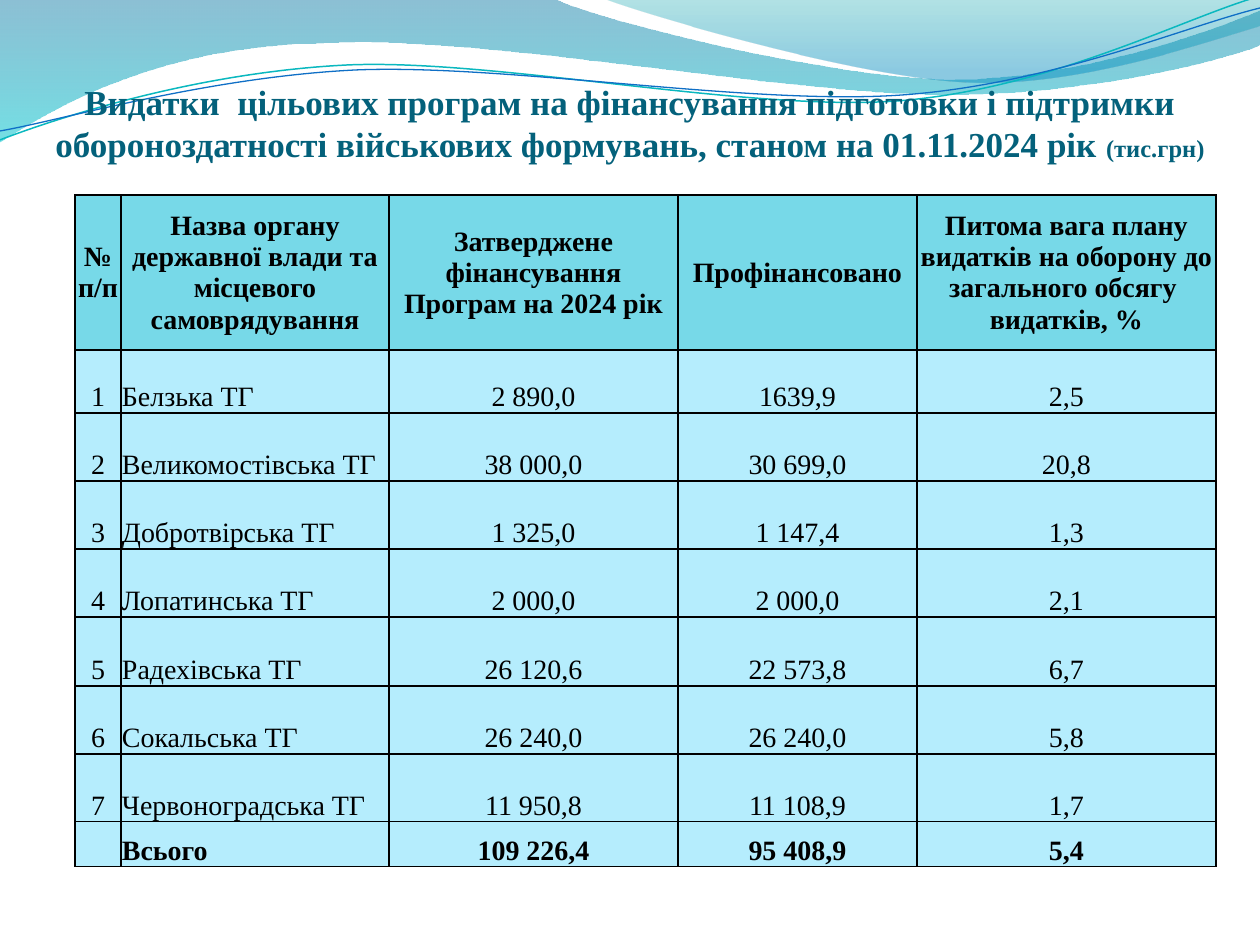
"""Build a slide with a wave banner, a title and a table of defence spending."""
from math import cos, radians, sin

from lxml import etree
from pptx import Presentation
from pptx.dml.color import RGBColor
from pptx.enum.text import MSO_ANCHOR, MSO_AUTO_SIZE, PP_ALIGN
from pptx.oxml.ns import qn
from pptx.util import Pt

CENTER = PP_ALIGN.CENTER
MIDDLE, BOTTOM = MSO_ANCHOR.MIDDLE, MSO_ANCHOR.BOTTOM
NOFIT = MSO_AUTO_SIZE.NONE

PX = 914400 / 126
TILT = 2.7
FONT = "Times New Roman"
BLACK = RGBColor(0x00, 0x00, 0x00)
NAVY = RGBColor(0x04, 0x61, 0x7B)
HEAD = RGBColor(0x77, 0xD9, 0xE8)
BODY = RGBColor(0xB5, 0xED, 0xFD)
TEAL = RGBColor(0x0A, 0xB8, 0xBF)
BLUE = RGBColor(0x0F, 0x6F, 0xC6)
DEEP = RGBColor(0x00, 0x74, 0xA1)
CYAN = RGBColor(0x00, 0xC6, 0xCF)
SEA = RGBColor(0x00, 0xA1, 0xA9)
SKY = RGBColor(0x00, 0x8B, 0xBF)

TITLE = [
    ("Видатки  цільових програм на фінансування підготовки і підтримки "
     "обороноздатності військових формувань, станом на 01.11.2024 рік ", 20),
    ("(тис.грн)", 14),
]
ROWS = [
    ("№ п/п", "Назва органу державної влади та місцевого самоврядування",
     "Затверджене фінансування Програм на 2024 рік", "Профінансовано",
     "Питома вага плану видатків на оборону до загального обсягу  видатків, %"),
    ("1", "Белзька ТГ", "2 890,0", "1639,9", "2,5"),
    ("2", "Великомостівська ТГ", "38 000,0", "30 699,0", "20,8"),
    ("3", "Добротвірська ТГ", "1 325,0", "1 147,4", "1,3"),
    ("4", "Лопатинська ТГ", "2 000,0", "2 000,0", "2,1"),
    ("5", "Радехівська ТГ", "26 120,6", "22 573,8", "6,7"),
    ("6", "Сокальська ТГ", "26 240,0", "26 240,0", "5,8"),
    ("7", "Червоноградська ТГ", "11 950,8", "11 108,9", "1,7"),
    ("", "Всього", "109 226,4", "95 408,9", "5,4"),
]
WIDTHS = [46, 268, 289, 239, 299]
HEIGHTS = [155, 63, 68, 68, 68, 69, 68, 68, 45]

BANDS = [
    ([[(0, 0)], [(554, -1)],
      [(600, 21), (837, 79), (955, 79)], [(1075, 79), (1207, 33), (1260, 11)],
      [(1261, 45)], [(1239, 55), (1096, 96), (940, 94)],
      [(784, 94), (481, 35), (324, 43)], [(163, 45), (58, 105), (-1, 142)]],
     [(0, DEEP, 45), (1, CYAN, 55)]),
    ([[(604, -1)], [(641, 14), (859, 78), (969, 82)],
      [(1079, 87), (1211, 40), (1260, 26)], [(1260, 0)]],
     [(0, SEA, 30), (0.8, SKY, 45)]),
]
LINES = [
    ([[(0, 140)], [(60, 117), (199, 72), (349, 65)],
      [(498, 59), (747, 112), (898, 101)], [(1050, 89), (1182, 19), (1257, -3)]],
     (629, 72), TEAL, 0.85),
    ([[(0, 131)], [(59, 121), (207, 77), (357, 70)],
      [(508, 64), (752, 106), (903, 95)], [(1053, 84), (1186, 26), (1260, 8)]],
     (630, 74), BLUE, 0.75),
]


def px(num):
    return round(num * PX)


def apply(item, form):
    for key, val in form.items():
        setattr(item, key, val)


def turn(path, mid):
    c, s = cos(radians(TILT)), sin(radians(TILT))
    a, b = mid
    return [[(a + (x - a) * c - (y - b) * s, b + (x - a) * s + (y - b) * c)
             for x, y in step] for step in path]


def draw(shapes, path, close):
    dots = [(px(x), px(y)) for step in path for x, y in step]
    pen = shapes.build_freeform(*dots[0])
    pen.add_line_segments(dots[1:], close=close)
    shape = pen.convert_to_shape()
    shape.shadow.inherit = False
    parts = iter(list(shape.element.iter(qn("a:lnTo"))))
    for step in path[1:]:
        group = [next(parts) for _ in step]
        if len(group) == 3:
            group[0].tag
            curve = etree.Element(qn("a:cubicBezTo"))
            group[0].addprevious(curve)
            for part in group:
                curve.append(part[0])
                part.getparent().remove(part)
    return shape


def shade(shape, stops):
    shape.line.fill.background()
    shape.fill.gradient()
    shape.fill.gradient_angle = 270
    for stop, (place, color, alpha) in zip(shape.fill.gradient_stops, stops):
        stop.position = place
        stop.color.rgb = color
        tone = stop.color._xFill.find(qn("a:srgbClr")) \
            if hasattr(stop.color, "_xFill") else None
    for tone, (_, _, alpha) in zip(shape.element.iter(qn("a:srgbClr")), stops):
        etree.SubElement(tone, qn("a:alpha"), val=str(alpha * 1000))


def add_waves(deck, slide):
    waves = []
    for path, stops in BANDS:
        shape = draw(slide.shapes, path, True)
        shade(shape, stops)
        waves.append(shape)
    group = slide.shapes.add_group_shape()
    for path, mid, color, width in LINES:
        shape = draw(group.shapes, turn(path, mid), False)
        shape.rotation = 360 - TILT
        shape.fill.background()
        shape.line.color.rgb = color
        shape.line.width = Pt(width)
    tree = deck.slide_master.shapes.element
    for spot, wave in enumerate([*waves, group], 2):
        tree.insert(spot, wave.element)
    for num, tag in enumerate(tree.iter(qn("p:cNvPr")), 1):
        tag.set("id", str(num))


def write(para, text, size, color, bold):
    run = para.add_run()
    run.text = text
    apply(run.font, {"name": FONT, "size": Pt(size), "bold": bold})
    run.font.color.rgb = color


def edge(cell):
    props = cell._tc.get_or_add_tcPr()
    for side in ("lnL", "lnR", "lnT", "lnB"):
        line = etree.SubElement(props, qn("a:" + side), w=str(Pt(1)))
        fill = etree.SubElement(line, qn("a:solidFill"))
        etree.SubElement(fill, qn("a:srgbClr"), val=str(BLACK))


def fill_cell(cell, text, row, col):
    head, last = row == 0, row == len(ROWS) - 1
    apply(cell, {"margin_left": px(1), "margin_right": px(1),
                 "margin_top": px(1), "margin_bottom": 0,
                 "vertical_anchor": MIDDLE if head else BOTTOM})
    edge(cell)
    cell.fill.solid()
    cell.fill.fore_color.rgb = HEAD if head else BODY
    if text:
        para = cell.text_frame.paragraphs[0]
        if head or col != 1:
            para.alignment = CENTER
        write(para, text, 16, BLACK, head or last)


def add_title(slide):
    title = slide.shapes.title
    apply(title, {"left": px(25), "top": px(26),
                  "width": px(1210), "height": px(139)})
    frame = title.text_frame
    apply(frame, {"margin_left": 0, "margin_right": 0, "margin_top": px(6),
                  "margin_bottom": 0, "vertical_anchor": BOTTOM,
                  "word_wrap": True, "auto_size": NOFIT})
    para = frame.paragraphs[0]
    para.alignment = CENTER
    for text, size in TITLE:
        write(para, text, size, NAVY, True)


def add_grid(slide):
    grid = slide.shapes.add_table(
        len(ROWS), len(WIDTHS), px(75), px(195),
        px(sum(WIDTHS)), px(sum(HEIGHTS))).table
    apply(grid, {"first_row": False, "horz_banding": False})
    for col, width in zip(grid.columns, WIDTHS):
        col.width = px(width)
    for row, height in zip(grid.rows, HEIGHTS):
        row.height = px(height)
    for r, texts in enumerate(ROWS):
        for c, text in enumerate(texts):
            fill_cell(grid.cell(r, c), text, r, c)


def main():
    deck = Presentation()
    apply(deck, {"slide_width": px(1260), "slide_height": px(945)})
    slide = deck.slides.add_slide(deck.slide_layouts[5])
    add_waves(deck, slide)
    add_title(slide)
    add_grid(slide)
    deck.save("out.pptx")


if __name__ == "__main__":
    main()
